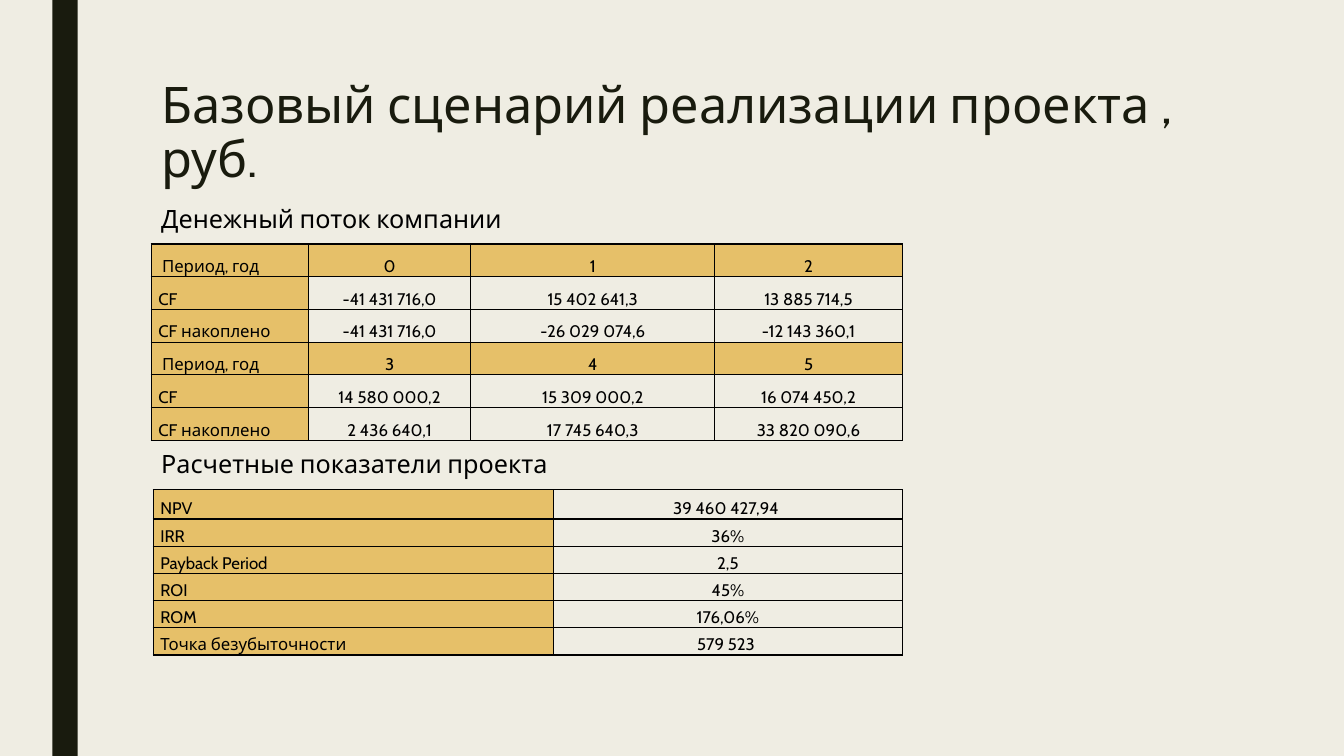
from dataclasses import dataclass

from lxml import etree
from pptx import Presentation
from pptx.dml.color import RGBColor
from pptx.enum.shapes import MSO_SHAPE
from pptx.enum.text import MSO_ANCHOR, PP_ALIGN
from pptx.oxml.ns import qn
from pptx.slide import Slide
from pptx.table import _Cell
from pptx.text.text import _Paragraph
from pptx.util import Inches, Pt

RECTANGLE = MSO_SHAPE.RECTANGLE
TOP, BOTTOM = MSO_ANCHOR.TOP, MSO_ANCHOR.BOTTOM
LEFT, CENTER = PP_ALIGN.LEFT, PP_ALIGN.CENTER

FONT = "Cabin"
COLORS = {
    "background": "EFEDE3",
    "dark": "191B0E",
    "text": "000000",
    "border": "000000",
    "header": "E6C069",
}
CELL_FORMAT = {
    "margin_left": Inches(0.07),
    "margin_right": Inches(0.07),
    "margin_top": 0,
    "margin_bottom": 0,
    "vertical_anchor": BOTTOM,
}
PLAIN_TABLE = {"first_row": False, "horz_banding": False}
BORDER_SIDES = ("a:lnL", "a:lnR", "a:lnT", "a:lnB")


@dataclass(frozen=True)
class TextBlock:
    text: str
    left: float
    top: float
    width: float
    height: float
    size: int
    color: str = "text"
    line_spacing: float = 1.0


@dataclass(frozen=True)
class TableBlock:
    left: float
    top: float
    columns: tuple[float, ...]
    row_heights: tuple[float, ...]
    rows: tuple[tuple[str, ...], ...]
    header_rows: tuple[int, ...] = ()


TEXTS = (
    TextBlock("Базовый сценарий реализации проекта , руб.",
              1.5, 0.75, 11.01, 1.62, 36, "dark", 0.89),
    TextBlock("Денежный поток компании", 1.5, 1.97, 4.84, 0.4, 18),
    TextBlock("Расчетные показатели проекта", 1.5, 4.4, 4.51, 0.4, 18),
)

CASH_FLOW = TableBlock(
    1.5, 2.42, (1.56, 1.61, 2.42, 1.86), (0.325,) * 6,
    (
        (" Период, год", "0", "1", "2"),
        ("CF", "-41 431 716,0", "15 402 641,3", "13 885 714,5"),
        ("CF накоплено", "-41 431 716,0", "-26 029 074,6", "-12 143 360,1"),
        (" Период, год", "3", "4", "5"),
        ("CF", "14 580 000,2", "15 309 000,2", "16 074 450,2"),
        ("CF накоплено", "2 436 640,1", "17 745 640,3", "33 820 090,6"),
    ),
    header_rows=(0, 3),
)

INDICATORS = TableBlock(
    1.52, 4.86, (3.97, 3.46), (0.29,) + (0.27,) * 5,
    (
        ("NPV", "39 460 427,94 "),
        ("IRR", "36%"),
        ("Payback Period", "2,5"),
        ("ROI", "45%"),
        ("ROM", "176,06%"),
        ("Точка безубыточности", "579 523 "),
    ),
)


def rgb(name: str) -> RGBColor:
    return RGBColor.from_string(COLORS[name])


def write_text(paragraph: _Paragraph, text: str, size: int, color: str) -> None:
    run = paragraph.add_run()
    run.text = text
    run.font.name = FONT
    run.font.size = Pt(size)
    run.font.color.rgb = rgb(color)


def add_text(slide: Slide, block: TextBlock) -> None:
    shape = slide.shapes.add_textbox(
        Inches(block.left), Inches(block.top), Inches(block.width), Inches(block.height))
    frame = shape.text_frame
    frame.word_wrap = True
    frame.vertical_anchor = TOP
    paragraph = frame.paragraphs[0]
    paragraph.line_spacing = block.line_spacing
    write_text(paragraph, block.text, block.size, block.color)


def add_borders(cell: _Cell) -> None:
    properties = cell._tc.get_or_add_tcPr()
    for side in BORDER_SIDES:
        line = etree.SubElement(properties, qn(side), w=str(Pt(1)))
        fill = etree.SubElement(line, qn("a:solidFill"))
        etree.SubElement(fill, qn("a:srgbClr"), val=COLORS["border"])


def fill_cell(cell: _Cell, text: str, is_label: bool, is_header: bool) -> None:
    """Labels stand left; labels and header rows are coloured."""
    for name, value in CELL_FORMAT.items():
        setattr(cell, name, value)
    add_borders(cell)
    if is_label or is_header:
        cell.fill.solid()
        cell.fill.fore_color.rgb = rgb("header")
    else:
        cell.fill.background()
    paragraph = cell.text_frame.paragraphs[0]
    paragraph.alignment = LEFT if is_label else CENTER
    write_text(paragraph, text, 12, "text")


def add_table(slide: Slide, block: TableBlock) -> None:
    table = slide.shapes.add_table(
        len(block.rows), len(block.columns), Inches(block.left), Inches(block.top),
        Inches(sum(block.columns)), Inches(sum(block.row_heights))).table
    for name, value in PLAIN_TABLE.items():
        setattr(table, name, value)
    for column, width in zip(table.columns, block.columns):
        column.width = Inches(width)
    for row, height in zip(table.rows, block.row_heights):
        row.height = Inches(height)
    for row_index, texts in enumerate(block.rows):
        for column_index, text in enumerate(texts):
            fill_cell(table.cell(row_index, column_index), text,
                      column_index == 0, row_index in block.header_rows)


def add_side_bar(slide: Slide) -> None:
    shape = slide.shapes.add_shape(
        RECTANGLE, Inches(0.52), 0, Inches(0.25), Inches(7.5))
    shape.shadow.inherit = False
    shape.fill.solid()
    shape.fill.fore_color.rgb = rgb("dark")
    shape.line.fill.background()


def main() -> None:
    presentation = Presentation()
    presentation.slide_width = Inches(13.33)
    presentation.slide_height = Inches(7.5)
    slide = presentation.slides.add_slide(presentation.slide_layouts[6])
    slide.background.fill.solid()
    slide.background.fill.fore_color.rgb = rgb("background")

    add_side_bar(slide)
    title, cash_flow_heading, indicators_heading = TEXTS
    add_text(slide, title)
    add_table(slide, CASH_FLOW)
    add_text(slide, cash_flow_heading)
    add_table(slide, INDICATORS)
    add_text(slide, indicators_heading)
    presentation.save("out.pptx")


if __name__ == "__main__":
    main()
